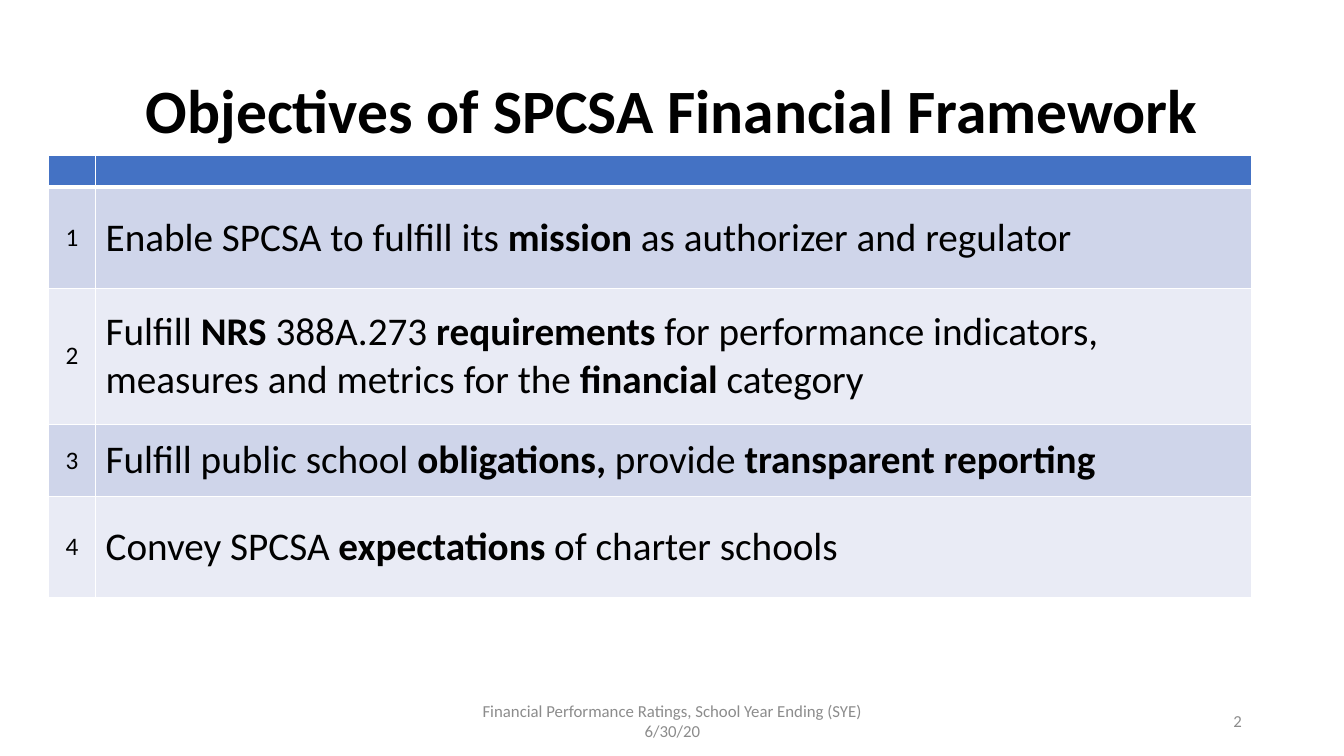
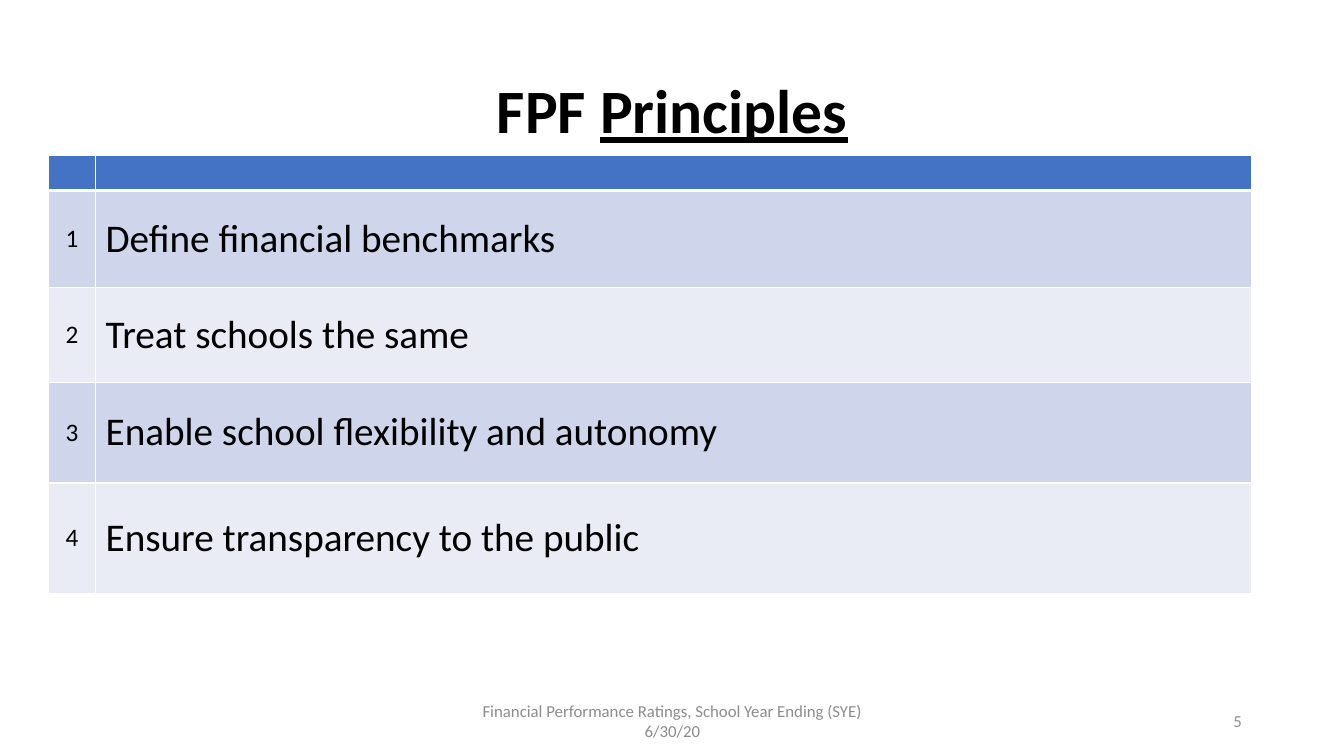
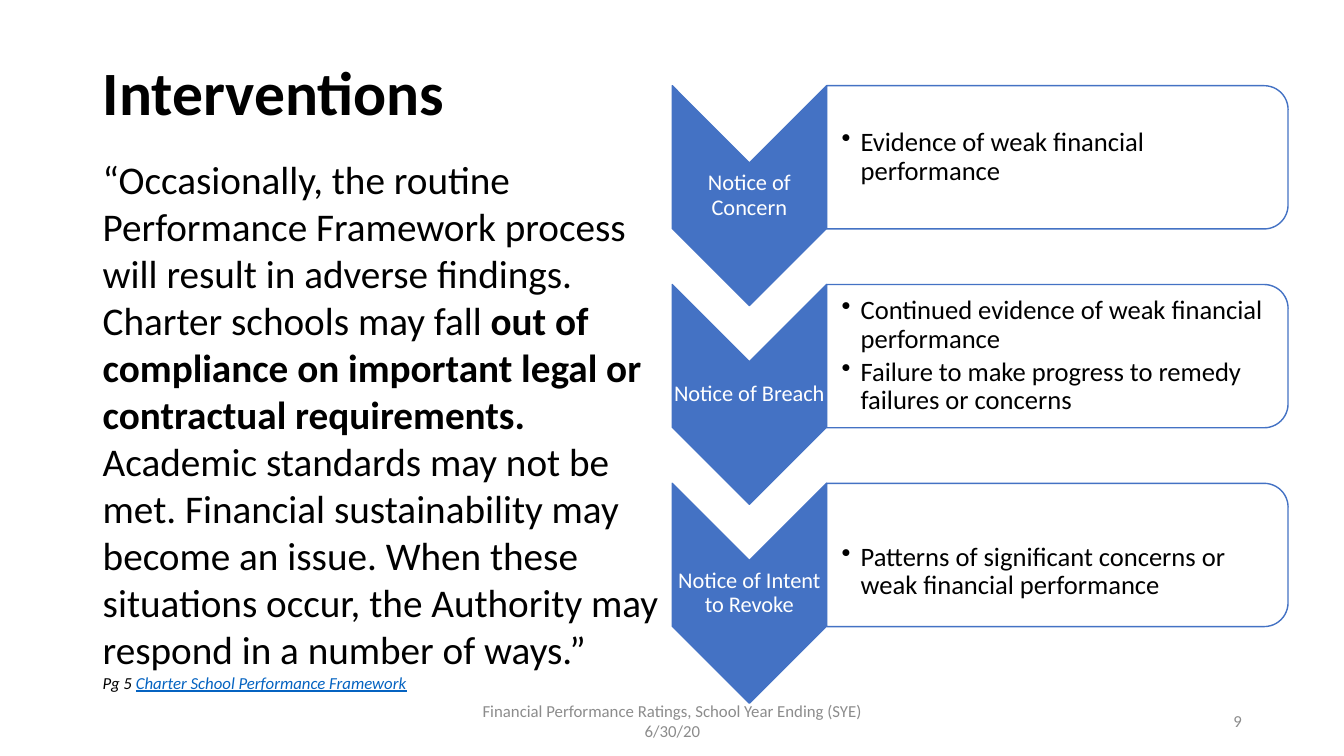
from dataclasses import dataclass

from lxml.etree import SubElement
from pptx import Presentation
from pptx.dml.color import RGBColor
from pptx.enum.shapes import MSO_SHAPE as SHAPE
from pptx.enum.text import MSO_ANCHOR as ANCHOR, PP_ALIGN as ALIGN
from pptx.oxml.ns import qn
from pptx.util import Cm, Pt


@dataclass(frozen=True)
class Theme:
    # Colours
    ink: str = "000000"
    white: str = "FFFFFF"
    accent: str = "4472C4"
    band_dark: str = "CFD5EA"
    band_light: str = "E9EBF5"
    muted: str = "8C8C8C"
    link: str = "0563C1"
    # Type
    font: str = "Calibri"
    title: int = 44
    body: int = 28
    detail: int = 19
    number: int = 18
    label: int = 16
    small: int = 12


THEME = Theme()
FOOTER = "Financial Performance Ratings, School Year Ending (SYE) 6/30/20"


class Deck:
    def __init__(self, theme):
        self.t = theme
        self.prs = Presentation()
        self.prs.slide_width, self.prs.slide_height = Cm(33.87), Cm(19.05)
        self.s = None

    def slide(self, title, number, align=ALIGN.CENTER, title_height=3.68):
        """Start a slide with its title, footer and number."""
        self.s = self.prs.slides.add_slide(self.prs.slide_layouts[6])
        t = self.t
        tf = self.text_box(2.34, 1.02, 29.21, title_height)
        self.add_runs(tf.paragraphs[0], title, t.title, align=align, spacing=0.9, style="b")
        for text, left, width, al in ((FOOTER, 11.23, 11.43, ALIGN.CENTER),
                                      (str(number), 23.93, 7.62, ALIGN.RIGHT)):
            tf = self.text_box(left, 17.65, width, 1.02)
            self.add_runs(tf.paragraphs[0], [(text, "")], t.small, t.muted, al)

    def add_runs(self, p, runs, size, color=None, align=ALIGN.LEFT,
                 spacing=None, after=None, style=""):
        """Fill a paragraph with (text, style) runs: b bold, i italic, u underline, k link look."""
        p.alignment = align
        if spacing:
            p.line_spacing = spacing
        if after:
            p.space_after = Pt(after)
        for text, marks in runs:
            r = p.add_run()
            r.text = text
            marks += style
            f = r.font
            f.name, f.size = self.t.font, Pt(size)
            f.bold, f.italic, f.underline = "b" in marks, "i" in marks, "u" in marks
            rgb = self.t.link if "k" in marks else color or self.t.ink
            f.color.rgb = RGBColor.from_string(rgb)

    def text_box(self, left, top, width, height, anchor=ANCHOR.MIDDLE, insets=None):
        """Add a wrapping text box; insets run left, top, right, bottom."""
        sp = self.s.shapes.add_textbox(Cm(left), Cm(top), Cm(width), Cm(height))
        tf = sp.text_frame
        tf.word_wrap, tf.vertical_anchor = True, anchor
        if insets:
            (tf.margin_left, tf.margin_top,
             tf.margin_right, tf.margin_bottom) = map(Cm, insets)
        return tf

    def turned_shape(self, kind, left, top, width, height, fill, alpha=None):
        """Add a shape turned a quarter; the box given is the one seen on the slide."""
        x, y = left + (width - height) / 2, top + (height - width) / 2
        sp = self.s.shapes.add_shape(kind, Cm(x), Cm(y), Cm(height), Cm(width))
        sp.rotation = 90
        sp.shadow.inherit = False
        sp.fill.solid()
        sp.fill.fore_color.rgb = RGBColor.from_string(fill)
        sp.line.color.rgb = RGBColor.from_string(self.t.accent)
        sp.line.width = Pt(1)
        if alpha:
            clr = sp._element.spPr.find(qn("a:solidFill"))[0]
            SubElement(clr, qn("a:alpha"), val=str(alpha * 1000))

    def bullet(self, p):
        pPr = p._p.get_or_add_pPr()
        pPr.set("marL", str(Cm(0.48)))
        pPr.set("indent", str(-Cm(0.48)))
        SubElement(pPr, qn("a:buChar"), char="•")

    def cell(self, cell, fill, bottom=1):
        """Give a cell white borders and a plain fill."""
        cell.vertical_anchor = ANCHOR.MIDDLE
        tcPr = cell._tc.get_or_add_tcPr()
        for side, width in (("L", 1), ("R", 1), ("T", 1), ("B", bottom)):
            ln = SubElement(tcPr, qn(f"a:ln{side}"), w=str(Pt(width)))
            SubElement(SubElement(ln, qn("a:solidFill")), qn("a:srgbClr"), val=self.t.white)
        cell.fill.solid()
        cell.fill.fore_color.rgb = RGBColor.from_string(fill)

    def numbered_table(self, items, heights):
        """Add a table of numbered statements under an empty header band."""
        t = self.t
        table = self.s.shapes.add_table(len(heights), 2, Cm(1.22), Cm(3.91),
                                        Cm(30.32), Cm(sum(heights))).table
        for col, width in zip(table.columns, (1.19, 29.13)):
            col.width = Cm(width)
        for row, height in zip(table.rows, heights):
            row.height = Cm(height)
        for c in table.rows[0].cells:
            self.cell(c, t.accent, bottom=3)
            SubElement(c.text_frame.paragraphs[0]._p, qn("a:endParaRPr"), sz="1000")
        for i, runs in enumerate(items, 1):
            number, statement = table.rows[i].cells
            for c in (number, statement):
                self.cell(c, t.band_dark if i % 2 else t.band_light)
            self.add_runs(number.text_frame.paragraphs[0], [(str(i), "")], t.number,
                          align=ALIGN.CENTER)
            self.add_runs(statement.text_frame.paragraphs[0], runs, t.body)

    def step(self, top, label, details, drop=0):
        """Add a chevron with its label and the panel of details beside it."""
        t = self.t
        left, width = 16.94, 3.89
        self.turned_shape(SHAPE.CHEVRON, left, top, width, 5.54, t.accent)
        tf = self.text_box(left, top + 1.95, width, 1.65, insets=[0.03] * 4)
        self.add_runs(tf.paragraphs[0], [(label, "")], t.label, t.white, ALIGN.CENTER, 0.9)
        panel = left + width
        self.turned_shape(SHAPE.ROUND_2_SAME_RECTANGLE, panel, top, 11.63, 3.61,
                          t.white, alpha=90)
        tf = self.text_box(panel, top + 0.18, 11.46, 3.25,
                           insets=(0.38, 0.03 + drop, 0.03, 0.03))
        for i, text in enumerate(details):
            p = tf.add_paragraph() if i else tf.paragraphs[0]
            self.add_runs(p, [(text, "")], t.detail, spacing=0.9, after=3)
            self.bullet(p)


def main():
    d = Deck(THEME)

    # Objectives
    d.slide([("Objectives of SPCSA Financial Framework", "")], 2)
    d.numbered_table([
        [("Enable SPCSA to fulfill its ", ""), ("mission ", "b"),
         ("as authorizer and regulator", "")],
        [("Fulfill ", ""), ("NRS ", "b"), ("388A.273", ""), (" requirements ", "b"),
         ("for performance indicators, measures and metrics for the ", ""),
         ("financial ", "b"), ("category", "")],
        [("Fulfill public school ", ""), ("obligations, ", "b"), ("provide ", ""),
         ("transparent reporting", "b")],
        [("Convey SPCSA ", ""), ("expectations", "b"), (" of charter schools", "")],
    ], (0.81, 2.54, 3.43, 1.83, 2.54))

    # Principles
    d.slide([("FPF ", ""), ("Principles", "u")], 5)
    d.numbered_table([[(text, "")] for text in (
        "Define financial benchmarks",
        "Treat schools the same",
        "Enable school flexibility and autonomy",
        "Ensure transparency to the public",
    )], (0.89, 2.44, 2.39, 2.54, 2.79))

    # Interventions
    d.slide([("Interventions", "")], 9, ALIGN.LEFT, 2.77)
    tf = d.text_box(2.34, 3.78, 14.6, 13.94, ANCHOR.TOP)
    d.add_runs(tf.paragraphs[0], [
        ("“Occasionally, the routine Performance Framework process will result in "
         "adverse findings. Charter schools may fall ", ""),
        ("out of compliance on important legal or contractual requirements. ", "b"),
        ("Academic standards may not be met. Financial sustainability may become an "
         "issue. When these situations occur, the Authority may respond in a number "
         "of ways.”", ""),
    ], THEME.body)
    d.add_runs(tf.add_paragraph(),
               [("Pg 5 ", ""), ("Charter School Performance Framework", "uk")],
               THEME.small, style="i")
    steps = (
        ("Notice of Concern", ["Evidence of weak financial performance"], 0),
        ("Notice of Breach", ["Continued evidence of weak financial performance",
                              "Failure to make progress to remedy failures or concerns"], 0),
        ("Notice of Intent to Revoke",
         ["Patterns of significant concerns or weak financial performance"], 0.86),
    )
    for i, (label, details, drop) in enumerate(steps):
        d.step(2.16 + 5.01 * i, label, details, drop)

    d.prs.save("out.pptx")


if __name__ == "__main__":
    main()
